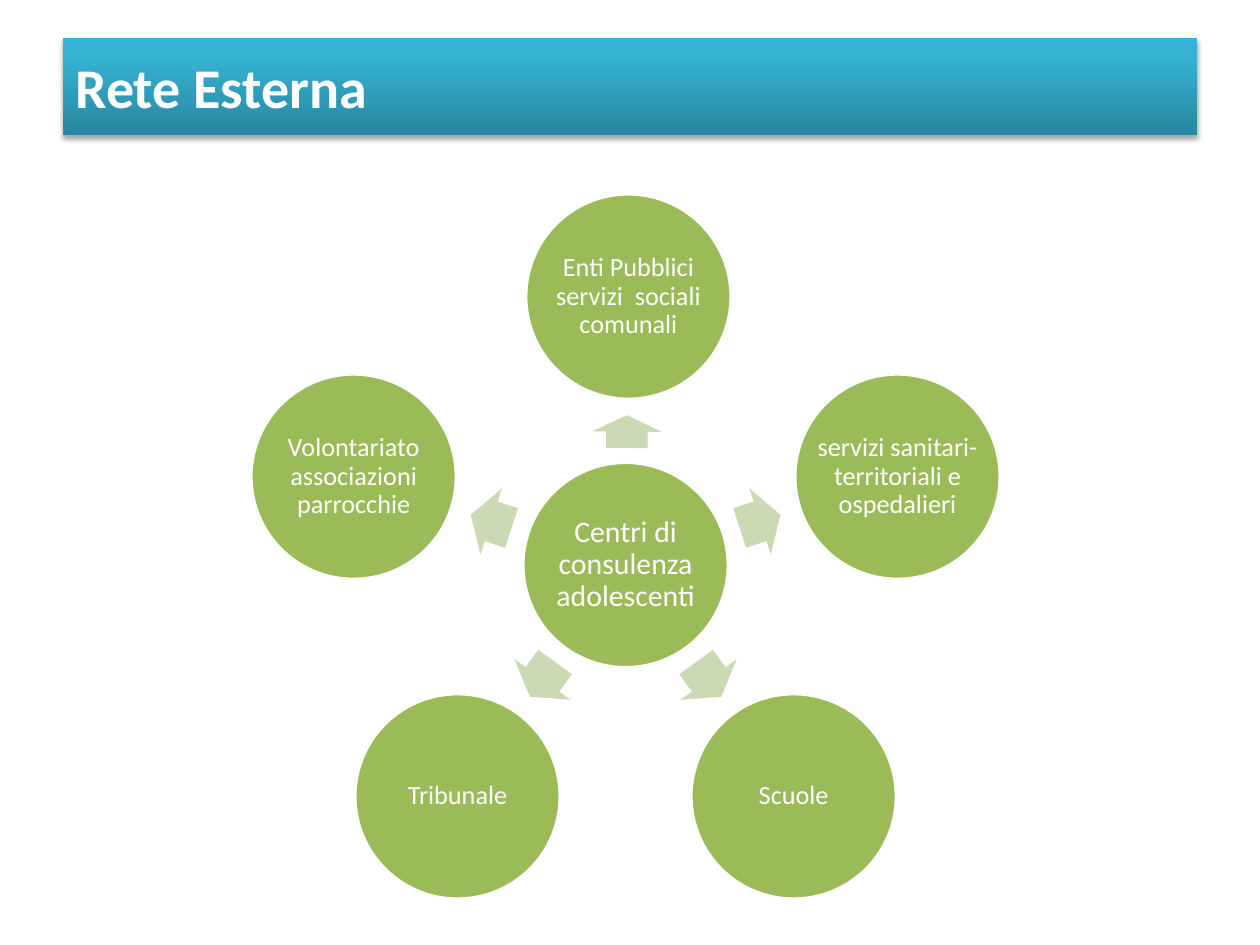
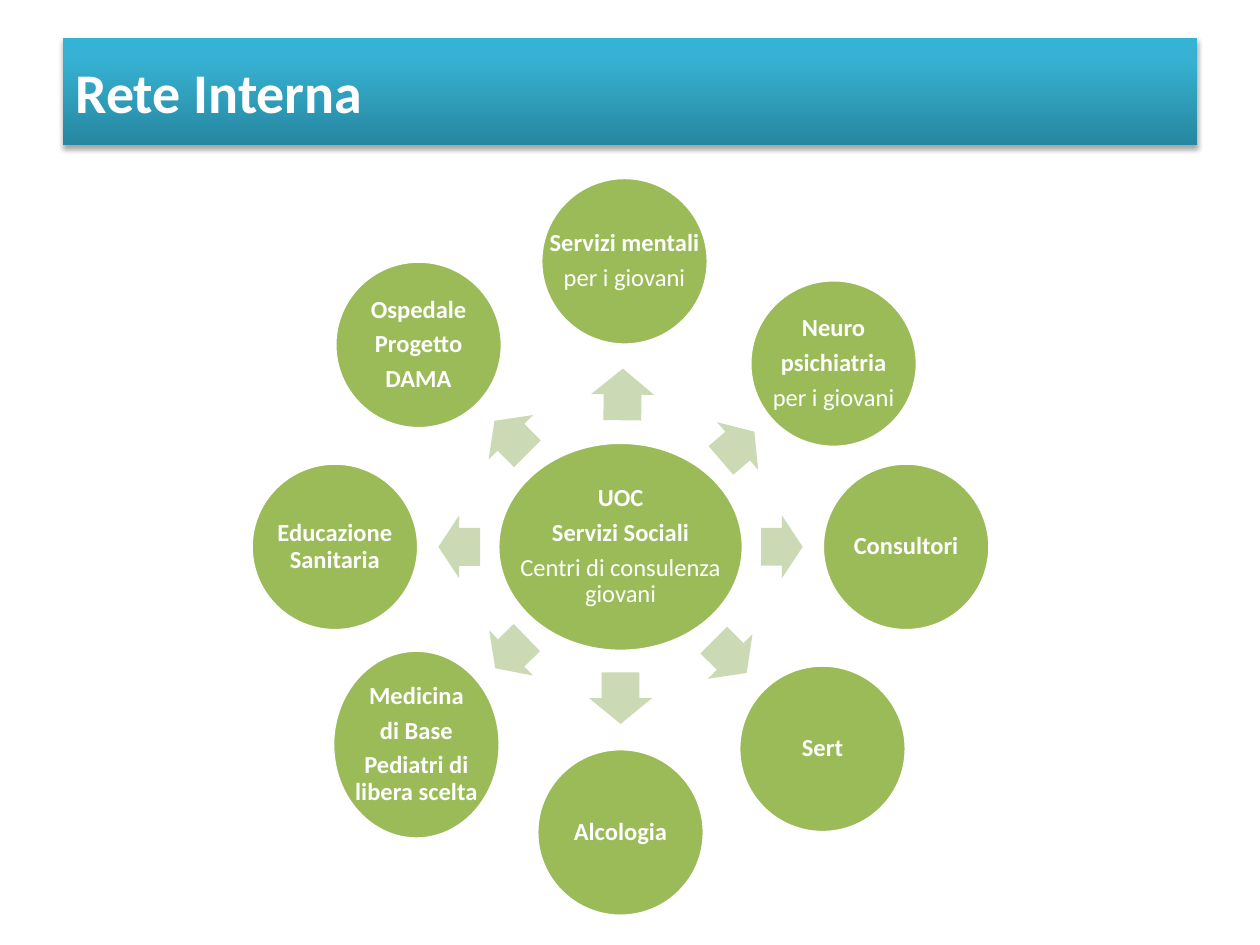
import dataclasses
import math

import lxml.etree
import pptx
import pptx.dml.color
import pptx.enum.shapes
import pptx.enum.text
import pptx.util

Pt = pptx.util.Pt
RGB = pptx.dml.color.RGBColor.from_string
SHAPE = pptx.enum.shapes.MSO_SHAPE
ALIGN = pptx.enum.text.PP_ALIGN
MIDDLE = pptx.enum.text.MSO_ANCHOR.MIDDLE
DRAWING = "http://schemas.openxmlformats.org/drawingml/2006/main"


@dataclasses.dataclass(frozen=True)
class Theme:
    font: str = "Calibri"
    white: str = "FFFFFF"
    circle: str = "9BBB59"
    arrow: str = "CBDAB5"
    band_stops: tuple = ((0, "34B3D6"), (20, "36B1D2"), (100, "2787A0"))
    title_size: int = 32
    border: int = 2


theme = Theme()


def write(shape, text, *, size, bold=False, align=ALIGN.CENTER,
          line_spacing=0.9, space_after=0.0):
    """Append one paragraph, filling the empty first one if it is free."""
    frame = shape.text_frame
    paragraph = frame.add_paragraph() if frame.text else frame.paragraphs[0]
    paragraph.alignment = align
    paragraph.line_spacing = line_spacing
    paragraph.space_after = Pt(space_after)
    run = paragraph.add_run()
    run.text = text
    run.font.name = theme.font
    run.font.size = Pt(size)
    run.font.bold = bold
    run.font.color.rgb = RGB(theme.white)


def add_circle(slide, x, y, width, height, bold_lines, plain_lines, size):
    """Draw a circle round (x, y), with its label across the full width."""
    box = Pt(x - width / 2), Pt(y - height / 2), Pt(width), Pt(height)
    circle = slide.shapes.add_shape(SHAPE.OVAL, *box)
    circle.shadow.inherit = False
    circle.fill.solid()
    circle.fill.fore_color.rgb = RGB(theme.circle)
    circle.line.color.rgb = RGB(theme.white)
    circle.line.width = Pt(theme.border)

    label = slide.shapes.add_textbox(*box)
    frame = label.text_frame
    frame.word_wrap = True
    frame.vertical_anchor = MIDDLE
    frame.margin_left = frame.margin_right = Pt(1.4)
    frame.margin_top = frame.margin_bottom = Pt(1.4)
    for line in bold_lines + plain_lines:
        write(label, line, size=size, bold=line in bold_lines,
              space_after=size * 0.33)


# Nodes: angle, distance, arrow distance, arrow length, height,
# bold lines, plain lines
networks = [
    dict(
        title="Rete Esterna", band_height=55.4, center=(357.5, 322.9),
        hub=(117.4, 117.4, [], ["Centri di consulenza adolescenti"], 17),
        node_width=117.4, node_size=15, arrow_breadth=39.6,
        nodes=[
            (270.6, 153.4, 76.3, 18.7, 117.4, [], ["Enti Pubblici servizi  sociali comunali"]),
            (342, 163.4, 80.8, 24.5, 117.4, [], ["servizi sanitari- territoriali e ospedalieri"]),
            (54, 163.4, 80.8, 24.5, 117.4, [], ["Scuole"]),
            (126, 163.4, 80.8, 24.5, 117.4, [], ["Tribunale"]),
            (198, 163.4, 80.8, 24.5, 117.4, [], ["Volontariato associazioni parrocchie"]),
        ],
    ),
    dict(
        title="Rete Interna", band_height=61.2, center=(354.6, 312.5),
        hub=(140.4, 119.5, ["UOC", "Servizi Sociali"], ["Centri di consulenza giovani"], 14),
        node_width=95.8, node_size=14, arrow_breadth=36,
        nodes=[
            (270.8, 163.2, 87.1, 29.5, 95.8, ["Servizi mentali"], ["per i giovani"]),
            (319.3, 160.6, 88.3, 25.2, 95.8, ["Neuro", "psichiatria"], ["per i giovani"]),
            (0, 163.2, 92.2, 23.8, 95.8, ["Consultori"], []),
            (45, 163.2, 88.6, 26.6, 95.8, ["Sert"], []),
            (90, 163.2, 86.4, 29.5, 95.8, ["Alcologia"], []),
            (135.9, 162.4, 87.1, 25.2, 108, ["Medicina", "di Base", "Pediatri di libera scelta"], []),
            (180, 163.2, 92.2, 23.8, 95.8, ["Educazione Sanitaria"], []),
            (225, 163.2, 88.6, 26.6, 95.8, ["Ospedale", "Progetto", "DAMA"], []),
        ],
    ),
]

presentation = pptx.Presentation()
presentation.slide_width = Pt(720)
presentation.slide_height = Pt(540)

for network in networks:
    slide = presentation.slides.add_slide(presentation.slide_layouts[6])
    center_x, center_y = network["center"]

    # Hub
    add_circle(slide, center_x, center_y, *network["hub"])

    # Arrows and outer circles
    breadth = network["arrow_breadth"]
    for angle, distance, arrow_distance, length, height, bold, plain in network["nodes"]:
        cosine, sine = math.cos(math.radians(angle)), math.sin(math.radians(angle))
        arrow = slide.shapes.add_shape(
            SHAPE.RIGHT_ARROW,
            Pt(center_x + arrow_distance * cosine - length / 2),
            Pt(center_y + arrow_distance * sine - breadth / 2),
            Pt(length), Pt(breadth))
        arrow.shadow.inherit = False
        arrow.rotation = angle
        arrow.adjustments[0] = 0.6
        arrow.adjustments[1] = 0.5
        arrow.fill.solid()
        arrow.fill.fore_color.rgb = RGB(theme.arrow)
        arrow.line.fill.background()
        add_circle(slide, center_x + distance * cosine, center_y + distance * sine,
                   network["node_width"], height, bold, plain, network["node_size"])

    # Title band with gradient and soft shadow
    band = slide.shapes.add_shape(
        SHAPE.RECTANGLE, Pt(36), Pt(21.6), Pt(648), Pt(network["band_height"]))
    band.line.fill.background()
    band.shadow.inherit = False
    band.fill.gradient()
    band.fill.gradient_angle = 270
    properties = band.element.spPr
    stops = properties.find(f".//{{{DRAWING}}}gsLst")
    for stop in list(stops):
        stops.remove(stop)
    for position, color in theme.band_stops:
        stops.append(lxml.etree.fromstring(
            f'<a:gs xmlns:a="{DRAWING}" pos="{position * 1000}">'
            f'<a:srgbClr val="{color}"/></a:gs>'))
    properties.find(f"{{{DRAWING}}}effectLst").append(lxml.etree.fromstring(
        f'<a:outerShdw xmlns:a="{DRAWING}" blurRad="{Pt(3)}" dist="{Pt(1.8)}" '
        'dir="5400000" rotWithShape="0"><a:srgbClr val="000000">'
        '<a:alpha val="35000"/></a:srgbClr></a:outerShdw>'))
    band.text_frame.vertical_anchor = MIDDLE
    write(band, network["title"], size=theme.title_size, bold=True,
          align=ALIGN.LEFT, line_spacing=1.0)

presentation.save("out.pptx")
